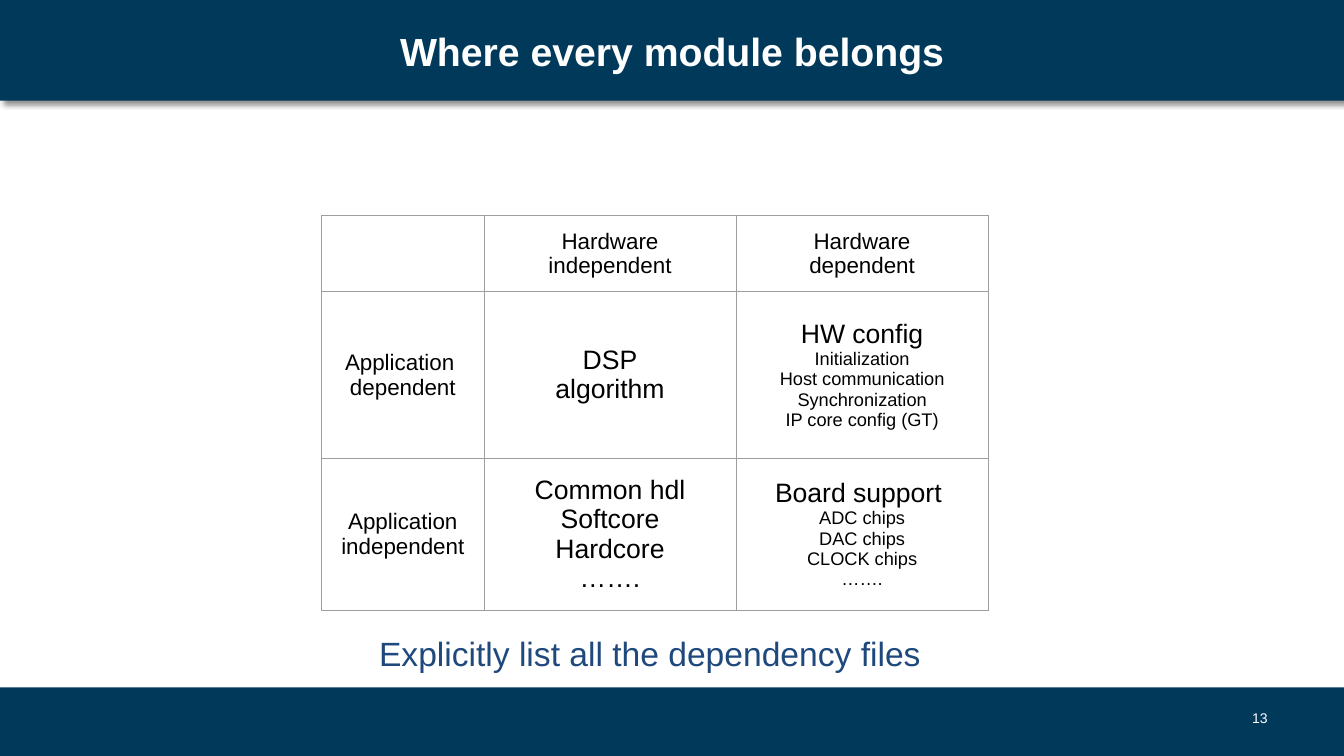
import pptx
import pptx.dml.color
import pptx.enum.shapes
import pptx.enum.text
import pptx.oxml
import pptx.oxml.ns
import pptx.util
from pptx.util import Inches

NAVY, BLUE, WHITE, BLACK, GRAY = "00395A", "1F497D", "FFFFFF", "000000", "9E9E9E"
ALIGN = pptx.enum.text.PP_ALIGN
MIDDLE = pptx.enum.text.MSO_ANCHOR.MIDDLE
DRAWING = pptx.oxml.ns.nsdecls("a")

LABEL, HEADING, DETAIL = 16, 19, 13
# Each cell is a list of (size, lines) groups.
MODULE_ROWS = [
    [
        [],
        [(LABEL, ["Hardware independent"])],
        [(LABEL, ["Hardware", "dependent"])],
    ],
    [
        [(LABEL, ["Application ", "dependent"])],
        [(HEADING, ["DSP", "algorithm"])],
        [(HEADING, ["HW config"]),
         (DETAIL, ["Initialization", "Host communication", "Synchronization",
                   "IP core config (GT)"])],
    ],
    [
        [(LABEL, ["Application", "independent"])],
        [(HEADING, ["Common hdl", "Softcore", "Hardcore", "…….",])],
        [(HEADING, ["Board support "]),
         (DETAIL, ["ADC chips", "DAC chips", "CLOCK chips", "……."])],
    ],
]


def rgb(value):
    return pptx.dml.color.RGBColor.from_string(value)


def add_run(paragraph, text, size, color, bold=False):
    run = paragraph.add_run()
    run.text = text
    run.font.name = "Arial"
    run.font.size = pptx.util.Pt(size)
    run.font.bold = bold
    run.font.color.rgb = rgb(color)


def set_margins(target, horizontal, vertical):
    target.margin_left = target.margin_right = Inches(horizontal)
    target.margin_top = target.margin_bottom = Inches(vertical)


def add_band(slide, left, top, width, height):
    band = slide.shapes.add_shape(
        pptx.enum.shapes.MSO_SHAPE.RECTANGLE,
        Inches(left), Inches(top), Inches(width), Inches(height))
    band.shadow.inherit = False
    band.fill.solid()
    band.fill.fore_color.rgb = rgb(NAVY)
    band.line.fill.background()
    return band


def add_text(slide, left, top, width, height, margins):
    """Add an empty wrapping text box and return its frame."""
    box = slide.shapes.add_textbox(
        Inches(left), Inches(top), Inches(width), Inches(height))
    frame = box.text_frame
    frame.word_wrap = True
    set_margins(frame, *margins)
    return frame


def add_header(slide, left, top, width, height):
    band = add_band(slide, left, top, width, height)
    effects = band._element.spPr.find(pptx.oxml.ns.qn("a:effectLst"))
    effects.append(pptx.oxml.parse_xml(
        f'<a:outerShdw {DRAWING} blurRad="50800" dist="38100" dir="2700000" '
        'algn="tl" rotWithShape="0"><a:srgbClr val="000000">'
        '<a:alpha val="43000"/></a:srgbClr></a:outerShdw>'))
    frame = band.text_frame
    frame.vertical_anchor = MIDDLE
    set_margins(frame, 0.1, 0.05)
    paragraph = frame.paragraphs[0]
    paragraph.alignment = ALIGN.CENTER
    add_run(paragraph, "Where every module belongs", 28, WHITE, bold=True)


def add_footer(slide, left, top, width, height):
    add_band(slide, left, top, width, height)
    frame = add_text(slide, left + width - 1.41, top + 0.1, 0.75, 0.4, (0.1, 0.05))
    frame.vertical_anchor = MIDDLE
    paragraph = frame.paragraphs[0]
    paragraph.alignment = ALIGN.RIGHT
    add_run(paragraph, "13", 10, WHITE)


def set_borders(cell):
    properties = cell._tc.get_or_add_tcPr()
    for position, side in enumerate(("lnL", "lnR", "lnT", "lnB")):
        properties.insert(position, pptx.oxml.parse_xml(
            f'<a:{side} {DRAWING} w="9525"><a:solidFill>'
            f'<a:srgbClr val="{GRAY}"/></a:solidFill></a:{side}>'))


def fill_cell(cell, groups):
    cell.fill.background()
    cell.vertical_anchor = MIDDLE
    set_margins(cell, 0.13, 0.13)
    set_borders(cell)
    lines = [(size, line) for size, texts in groups for line in texts]
    for index, (size, line) in enumerate(lines):
        frame = cell.text_frame
        paragraph = frame.add_paragraph() if index else frame.paragraphs[0]
        paragraph.alignment = ALIGN.CENTER
        add_run(paragraph, line, size, BLACK)


def add_module_table(slide, left, top, widths, heights):
    table = slide.shapes.add_table(
        len(heights), len(widths), Inches(left), Inches(top),
        Inches(sum(widths)), Inches(sum(heights))).table
    table.first_row = table.horz_banding = False
    for column, width in zip(table.columns, widths):
        column.width = Inches(width)
    for row, height, contents in zip(table.rows, heights, MODULE_ROWS):
        row.height = Inches(height)
        for cell, groups in zip(row.cells, contents):
            fill_cell(cell, groups)


def add_conclusion(slide, left, top, width, height):
    frame = add_text(slide, left, top, width, height, (0.13, 0.13))
    paragraph = frame.paragraphs[0]
    paragraph.line_spacing = 1.15
    paragraph.space_after = pptx.util.Pt(16)
    add_run(paragraph, "Explicitly list all the dependency files", 24, BLUE)


def main():
    presentation = pptx.Presentation()
    presentation.slide_width = Inches(13.33)
    presentation.slide_height = Inches(7.5)
    slide = presentation.slides.add_slide(presentation.slide_layouts[6])
    add_header(slide, 0, 0, 13.33, 1)
    add_module_table(slide, 3.19, 2.14, (1.61, 2.5, 2.5), (0.75, 1.65, 1.51))
    add_conclusion(slide, 3.63, 6.09, 8.77, 0.67)
    add_footer(slide, 0, 6.82, 13.33, 0.68)
    presentation.save("out.pptx")


if __name__ == "__main__":
    main()
